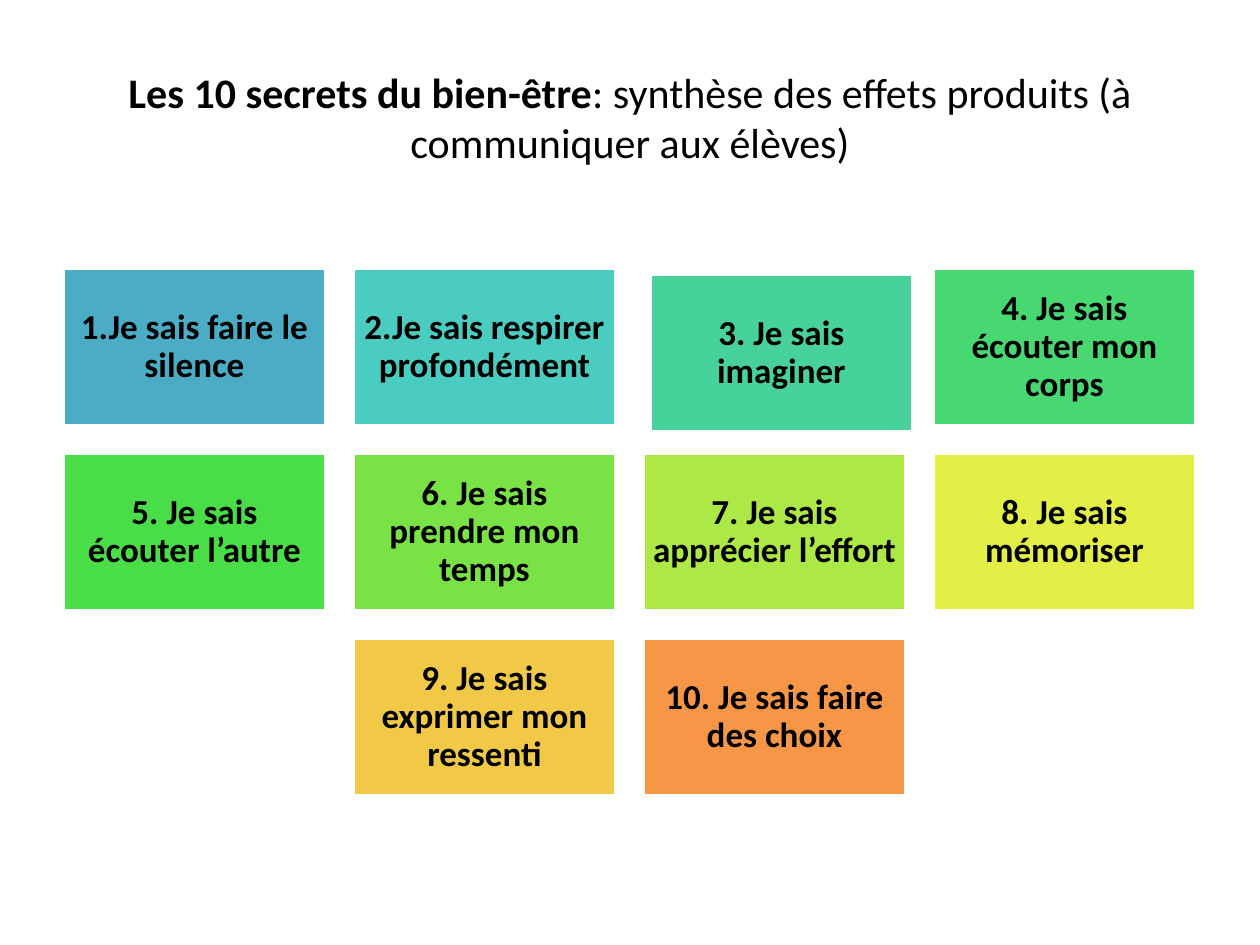
from pptx import Presentation
from pptx.dml.color import RGBColor
from pptx.enum.shapes import MSO_SHAPE
from pptx.enum.text import MSO_ANCHOR, PP_ALIGN
from pptx.util import Emu, Pt

RECT = MSO_SHAPE.RECTANGLE
MIDDLE = MSO_ANCHOR.MIDDLE
CENTER = PP_ALIGN.CENTER
SCALE = 914400 // 126  # EMU per px
TITLE_ONLY = 5


def px(n):
    return Emu(n * SCALE)


def color(code):
    return RGBColor.from_string(code)


class Deck:
    font = "Calibri"
    ink = "000000"
    edge = "FFFFFF"

    def __init__(self, wide, high):
        self.prs = Presentation()
        self.prs.slide_width, self.prs.slide_height = px(wide), px(high)
        layout = self.prs.slide_layouts[TITLE_ONLY]
        self.slide = self.prs.slides.add_slide(layout)

    def label(self, frame, runs, size):
        frame.word_wrap = True
        frame.vertical_anchor = MIDDLE
        para = frame.paragraphs[0]
        para.alignment = CENTER
        for text, bold in runs:
            run = para.add_run()
            run.text = text
            run.font.name = self.font
            run.font.size = Pt(size)
            run.font.bold = bold
            run.font.color.rgb = color(self.ink)
        return para

    def title(self, x, y, w, h, runs):
        box = self.slide.shapes.title
        box.left, box.top, box.width, box.height = map(px, (x, y, w, h))
        self.label(box.text_frame, runs, 24)

    def card(self, x, y, w, h, fill, text):
        box = self.slide.shapes.add_shape(RECT, *map(px, (x, y, w, h)))
        box.shadow.inherit = False
        box.fill.solid()
        box.fill.fore_color.rgb = color(fill)
        box.line.color.rgb = color(self.edge)
        box.line.width = Pt(2)
        frame = box.text_frame
        frame.margin_left = frame.margin_right = px(10)
        frame.margin_top = frame.margin_bottom = px(10)
        para = self.label(frame, [(text, True)], 20)
        para.line_spacing = 0.9


# Rows of cards: first column, then fill and text of each
ROWS = [
    (0, [("4BACC6", "1.Je sais faire le silence"),
         ("4ACCC0", "2.Je sais respirer profondément"),
         ("48D29B", "3. Je sais imaginer"),
         ("47D872", "4. Je sais écouter mon corps")]),
    (0, [("49DE47", "5. Je sais écouter l’autre"),
         ("79E346", "6. Je sais prendre mon temps"),
         ("ACE946", "7. Je sais apprécier l’effort"),
         ("E3EE46", "8. Je sais mémoriser")]),
    (1, [("F2C946", "9. Je sais exprimer mon ressenti"),
         ("F79646", "10. Je sais faire des choix")]),
]
# The third card sits slightly off the grid
SHIFT = {(0, 2): (7, 6)}


def main():
    deck = Deck(1260, 945)

    # Title
    deck.title(63, 38, 1134, 157, [
        ("Les 10 secrets du bien-être", True),
        (": synthèse des effets produits (à communiquer aux élèves)", False),
    ])

    # Cards
    for row, (first, cards) in enumerate(ROWS):
        for col, (fill, text) in enumerate(cards, first):
            dx, dy = SHIFT.get((row, col), (0, 0))
            deck.card(63 + 290 * col + dx, 268 + 185 * row + dy,
                      263, 158, fill, text)

    deck.prs.save("out.pptx")


if __name__ == "__main__":
    main()
